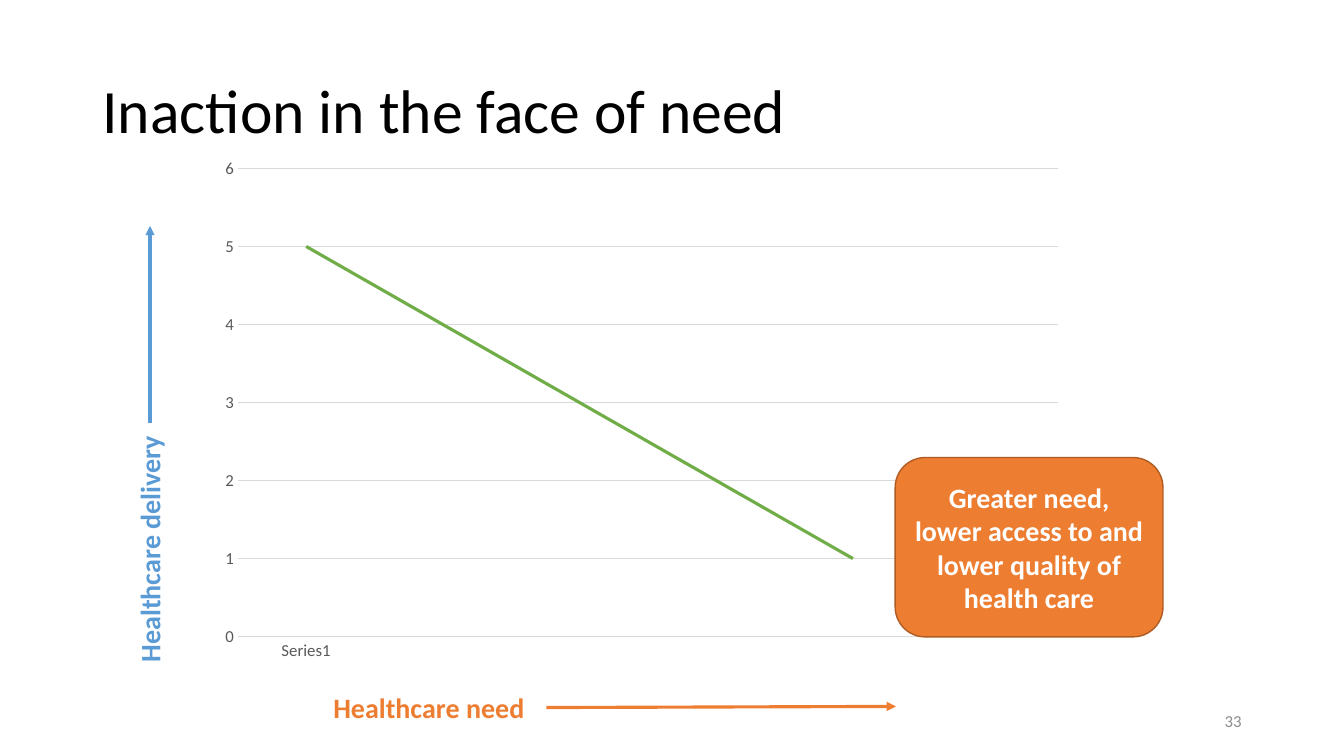
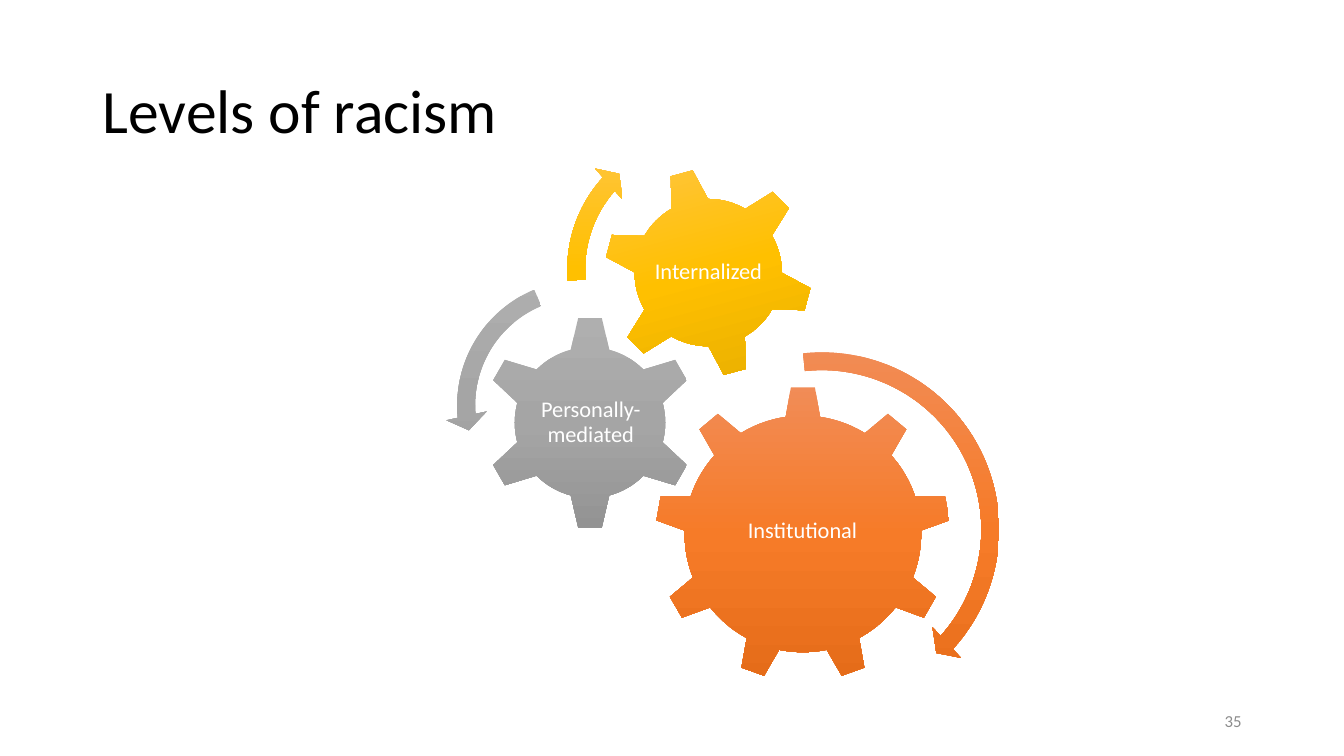
from copy import deepcopy

from pptx import Presentation
from pptx import util as u
from pptx.chart.data import CategoryChartData
from pptx.dml.color import RGBColor
from pptx.enum import chart as charts, shapes, text
from pptx.oxml.ns import qn
from pptx.oxml.xmlchemy import OxmlElement

BLACK = RGBColor(0x00, 0x00, 0x00)
WHITE = RGBColor(0xFF, 0xFF, 0xFF)
BLUE = RGBColor(0x5B, 0x9B, 0xD5)
ORANGE = RGBColor(0xED, 0x7D, 0x31)
RUST = RGBColor(0xAF, 0x5C, 0x24)
GREEN = RGBColor(0x70, 0xAD, 0x47)
DARK_GREY = RGBColor(0x59, 0x59, 0x59)
MID_GREY = RGBColor(0x8C, 0x8C, 0x8C)
LIGHT_GREY = RGBColor(0xD9, 0xD9, 0xD9)
ORANGE_BLEND = [RGBColor(0xF1, 0x8C, 0x57), RGBColor(0xF6, 0x7B, 0x28), RGBColor(0xE5, 0x6C, 0x19)]
GREY_BLEND = [RGBColor(0xAF, 0xAF, 0xAF), RGBColor(0xA5, 0xA5, 0xA5), RGBColor(0x93, 0x93, 0x93)]
GOLD_BLEND = [RGBColor(0xFF, 0xC6, 0x4B), RGBColor(0xFF, 0xC0, 0x00), RGBColor(0xE3, 0xAB, 0x00)]

SHAPE = shapes.MSO_SHAPE
ALIGN = text.PP_ALIGN
MIDDLE = text.MSO_ANCHOR.MIDDLE


def lengths(values):
    return [u.Cm(value) for value in values]


def apply(target, formats):
    for name, value in formats.items():
        setattr(target, name, value)


class Deck:
    font = "Calibri"
    title_place = (2.33, 1.01, 29.21, 3.68)
    number_place = (23.92, 17.65, 7.62, 1.02)

    def __init__(self):
        self.show = Presentation()
        apply(self.show, {"slide_width": u.Cm(33.87), "slide_height": u.Cm(19.05)})
        self.page = None

    def style_font(self, font, size, color, bold=False):
        apply(font, {"name": self.font, "size": u.Pt(size), "bold": bold})
        font.color.rgb = color

    def fill_text(self, box, words, size, color, bold=False, align=ALIGN.LEFT, spacing=1.0,
                  **frame):
        apply(box.text_frame, {"word_wrap": True, **frame})
        para = box.text_frame.paragraphs[0]
        apply(para, {"alignment": align, "line_spacing": spacing})
        span = para.add_run()
        span.text = words
        self.style_font(span.font, size, color, bold)

    def start_page(self, title, number):
        self.page = self.show.slides.add_slide(self.show.slide_layouts[5])
        box = self.page.shapes.title
        apply(box, dict(zip(("left", "top", "width", "height"), lengths(self.title_place))))
        self.fill_text(box, title, 44, BLACK, spacing=0.9, vertical_anchor=MIDDLE)
        self.label(self.number_place, number, 12, MID_GREY, align=ALIGN.RIGHT,
                   vertical_anchor=MIDDLE)

    def label(self, place, words, size, color, rotation=0, **formats):
        box = self.page.shapes.add_textbox(*lengths(place))
        box.rotation = rotation
        self.fill_text(box, words, size, color, **formats)

    def axis_label(self, place, words, color, rotation=0):
        self.label(place, words, 20, color, rotation, bold=True, word_wrap=False)

    def arrow(self, start, end, color):
        connector = self.page.shapes.add_connector(
            shapes.MSO_CONNECTOR.STRAIGHT, *lengths(start + end))
        connector.line.width = u.Pt(2.25)
        connector.line.color.rgb = color
        head = OxmlElement("a:tailEnd")
        head.set("type", "triangle")
        properties = connector._element.spPr
        properties.find(qn("a:ln")).append(head)
        properties.append(OxmlElement("a:effectLst"))

    def shape(self, kind, place):
        shape = self.page.shapes.add_shape(kind, *lengths(place))
        shape.shadow.inherit = False
        return shape

    def callout(self, place, words):
        shape = self.shape(SHAPE.ROUNDED_RECTANGLE, place)
        shape.fill.solid()
        shape.fill.fore_color.rgb = ORANGE
        shape.line.color.rgb = RUST
        shape.line.width = u.Pt(1)
        self.fill_text(shape, words, 20, WHITE, True, ALIGN.CENTER, vertical_anchor=MIDDLE)

    def blended(self, kind, left, top, size, blend, rotation=0, adjust=()):
        shape = self.shape(kind, (left, top, size, size))
        shape.rotation = rotation
        for index, value in enumerate(adjust):
            shape.adjustments[index] = value
        shape.line.fill.background()
        shape.fill.gradient()
        shape.fill.gradient_angle = 270
        stops = shape._element.spPr.find(qn("a:gradFill")).find(qn("a:gsLst"))
        stops.append(deepcopy(stops[-1]))
        for stop, color, position in zip(shape.fill.gradient_stops, blend, (0, 0.5, 1)):
            stop.color.rgb = color
            stop.position = position

    def gear_label(self, place, words):
        margins = dict.fromkeys(
            ("margin_left", "margin_top", "margin_right", "margin_bottom"), u.Cm(0.05))
        self.label(place, words, 16, WHITE, align=ALIGN.CENTER, spacing=0.9,
                   vertical_anchor=MIDDLE, **margins)

    def line_chart(self, place, categories, name, values, color):
        data = CategoryChartData()
        data.categories = categories
        data.add_series(name, values)
        frame = self.page.shapes.add_chart(
            charts.XL_CHART_TYPE.LINE, *lengths(place), data)
        chart = frame.chart
        apply(chart, {"has_legend": False, "has_title": False})
        self.style_font(chart.font, 10, BLACK)
        chart.plots[0].vary_by_categories = False
        series = chart.plots[0].series[0]
        series.smooth = False
        series.marker.style = charts.XL_MARKER_STYLE.NONE
        series.format.line.width = u.Pt(2.25)
        series.format.line.color.rgb = color
        for axis in (chart.category_axis, chart.value_axis):
            apply(axis, {"major_tick_mark": charts.XL_TICK_MARK.NONE,
                         "minor_tick_mark": charts.XL_TICK_MARK.NONE})
            self.style_font(axis.tick_labels.font, 12, DARK_GREY)
        apply(chart.value_axis, {"minimum_scale": 0, "maximum_scale": 6, "major_unit": 1,
                                 "has_major_gridlines": True})
        chart.value_axis.format.line.fill.background()
        for line in (chart.category_axis.format.line,
                     chart.value_axis.major_gridlines.format.line):
            line.width = u.Pt(0.75)
            line.color.rgb = LIGHT_GREY


def need_page(deck):
    deck.start_page("Inaction in the face of need", "33")
    deck.line_chart((5.24, 3.73, 21.86, 13.18), ["Series1"] + [""] * 5,
                    "Series 1", [5, 4, 3, 2, 1, None], GREEN)
    deck.arrow((3.78, 10.67), (3.78, 5.69), BLUE)
    deck.axis_label((0.63, 13.24, 6.28, 1.12), "Healthcare delivery", BLUE, 270)
    deck.axis_label((8.15, 17.28, 5.39, 1.12), "Healthcare need", ORANGE)
    deck.arrow((13.77, 17.83), (22.58, 17.8), ORANGE)
    deck.callout((22.56, 11.53, 6.75, 4.52),
                 "Greater need, lower access to and lower quality of health care")


def levels_page(deck):
    deck.start_page("Levels of racism", "35")
    gears = [
        (SHAPE.GEAR_9, 16.51, 9.73, 7.45, ORANGE_BLEND, 0,
         "Institutional", (18, 11.46, 4.45, 3.83)),
        (SHAPE.GEAR_6, 12.16, 7.94, 5.42, GREY_BLEND, 0,
         "Personally-mediated", (13.54, 9.32, 2.7, 2.67)),
        (SHAPE.GEAR_6, 15.2, 4.22, 5.3, GOLD_BLEND, 345,
         "Internalized", (16.37, 5.38, 2.97, 2.97)),
    ]
    for *gear, words, place in gears:
        deck.blended(*gear)
        deck.gear_label(place, words)
    turns = [
        (SHAPE.CIRCULAR_ARROW, 15.95, 8.58, 9.53, ORANGE_BLEND,
         (0.047, 2.99, 25.302, 158.313, 0.055)),
        (SHAPE.LEFT_CIRCULAR_ARROW, 11.23, 6.76, 6.91, GREY_BLEND,
         (0.065, 4.3, 104.891, 148.378, 0.075)),
        (SHAPE.CIRCULAR_ARROW, 14, 3.05, 7.47, GOLD_BLEND,
         (0.06, 3.941, 133.138, 105.082, 0.07)),
    ]
    for *turn, adjust in turns:
        deck.blended(*turn, adjust=adjust)


def main():
    deck = Deck()
    need_page(deck)
    levels_page(deck)
    deck.show.save("out.pptx")


if __name__ == "__main__":
    main()
